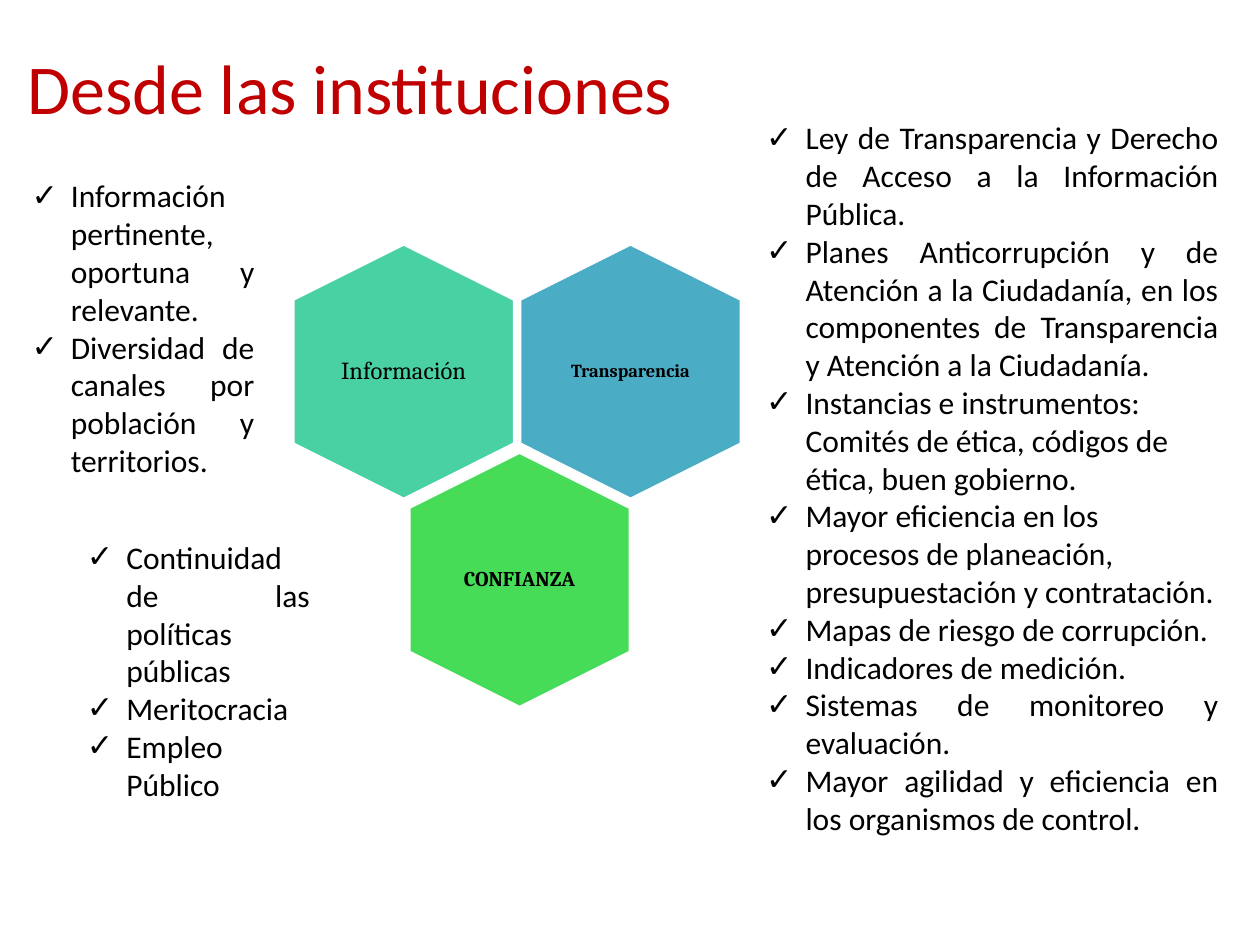
from lxml import etree
from pptx import Presentation
from pptx.dml import color
from pptx.enum import shapes, text
from pptx.oxml import ns
from pptx.util import Pt


def rgb(value):
    return color.RGBColor.from_string(value)


def add_check_bullet(paragraph):
    properties = paragraph._p.get_or_add_pPr()
    properties.set("marL", str(Pt(22.5)))
    properties.set("indent", str(-Pt(22.5)))
    font = etree.SubElement(properties, ns.qn("a:buFont"))
    font.set("typeface", "Wingdings")
    bullet = etree.SubElement(properties, ns.qn("a:buChar"))
    bullet.set("char", "✓")
    font.set("typeface", "Calibri")


JUSTIFY, LEFT = text.PP_ALIGN.JUSTIFY, text.PP_ALIGN.LEFT

presentation = Presentation()
presentation.slide_width, presentation.slide_height = Pt(720), Pt(540)
slide = presentation.slides.add_slide(presentation.slide_layouts[4])
placeholders = {shape.placeholder_format.idx: shape for shape in slide.placeholders}

title = slide.shapes.title
title.left, title.top, title.width, title.height = Pt(8.6), Pt(21.6), Pt(648), Pt(55.4)
title.text_frame.text = "Desde las instituciones"
title.text_frame.auto_size = text.MSO_AUTO_SIZE.NONE
title.text_frame.vertical_anchor = text.MSO_ANCHOR.MIDDLE
heading = title.text_frame.paragraphs[0]
heading.alignment = LEFT
heading.font.size = Pt(40)
heading.font.name = "Calibri"
heading.font.color.rgb = rgb("C00000")

lists = [
    (2, (430.6, 64.1, 272.9, 465.1), [
        ("Ley de Transparencia y Derecho de Acceso a la Información Pública.", JUSTIFY),
        ("Planes Anticorrupción y de Atención a la Ciudadanía, en los componentes "
         "de Transparencia y Atención a la Ciudadanía.", JUSTIFY),
        ("Instancias e instrumentos: Comités de ética, códigos de ética, buen gobierno.", LEFT),
        ("Mayor eficiencia en los procesos de planeación, presupuestación y contratación.", LEFT),
        ("Mapas de riesgo de corrupción.", LEFT),
        ("Indicadores de medición.", JUSTIFY),
        ("Sistemas de monitoreo y evaluación.", JUSTIFY),
        ("Mayor agilidad y eficiencia en los organismos de control.", JUSTIFY),
    ]),
    (1, (10.8, 97.2, 141.8, 181.4), [
        ("Información pertinente, oportuna y relevante.", JUSTIFY),
        ("Diversidad de canales por población y territorios.", JUSTIFY),
    ]),
    (3, (42.5, 303.8, 141.8, 159.8), [
        ("Continuidad de las políticas públicas", JUSTIFY),
        ("Meritocracia", JUSTIFY),
        ("Empleo Público", JUSTIFY),
    ]),
]
for index, (left, top, width, height), items in lists:
    body = placeholders[index]
    body.left, body.top, body.width, body.height = Pt(left), Pt(top), Pt(width), Pt(height)
    frame = body.text_frame
    frame.text = "\n".join(item for item, alignment in items)
    frame.auto_size = text.MSO_AUTO_SIZE.NONE
    frame.vertical_anchor = text.MSO_ANCHOR.TOP
    for paragraph, (item, alignment) in zip(frame.paragraphs, items):
        add_check_bullet(paragraph)
        paragraph.alignment = alignment
        paragraph.space_before = Pt(0)
        paragraph.font.size = Pt(18)
        paragraph.font.name = "Calibri"
        paragraph.font.bold = False
        paragraph.font.color.rgb = rgb("000000")

unused = placeholders[4].element
unused.getparent().remove(unused)

hexagons = [
    ("Transparencia", 287.3, 149, "4BACC6", 10.5, True),
    ("Información", 157.7, 149, "49D1A3", 14, False),
    ("CONFIANZA", 223.9, 268, "47DC57", 12, True),
]
for label, left, top, fill, size, bold in hexagons:
    hexagon = slide.shapes.add_shape(
        shapes.MSO_SHAPE.HEXAGON, Pt(left), Pt(top), Pt(146), Pt(126.7))
    hexagon.rotation = 90
    hexagon.shadow.inherit = False
    hexagon.fill.solid()
    hexagon.fill.fore_color.rgb = rgb(fill)
    hexagon.line.color.rgb = rgb("FFFFFF")
    hexagon.line.width = Pt(2)

    caption = slide.shapes.add_textbox(Pt(left + 29.4), Pt(top + 13.3), Pt(87.2), Pt(100))
    frame = caption.text_frame
    frame.text = label
    frame.word_wrap = True
    frame.vertical_anchor = text.MSO_ANCHOR.MIDDLE
    frame.margin_left = frame.margin_right = frame.margin_top = frame.margin_bottom = Pt(0)
    paragraph = frame.paragraphs[0]
    paragraph.alignment = text.PP_ALIGN.CENTER
    paragraph.line_spacing = 0.9
    paragraph.font.size = Pt(size)
    paragraph.font.name = "Cambria"
    paragraph.font.bold = bold
    paragraph.font.color.rgb = rgb("000000")

presentation.save("out.pptx")
